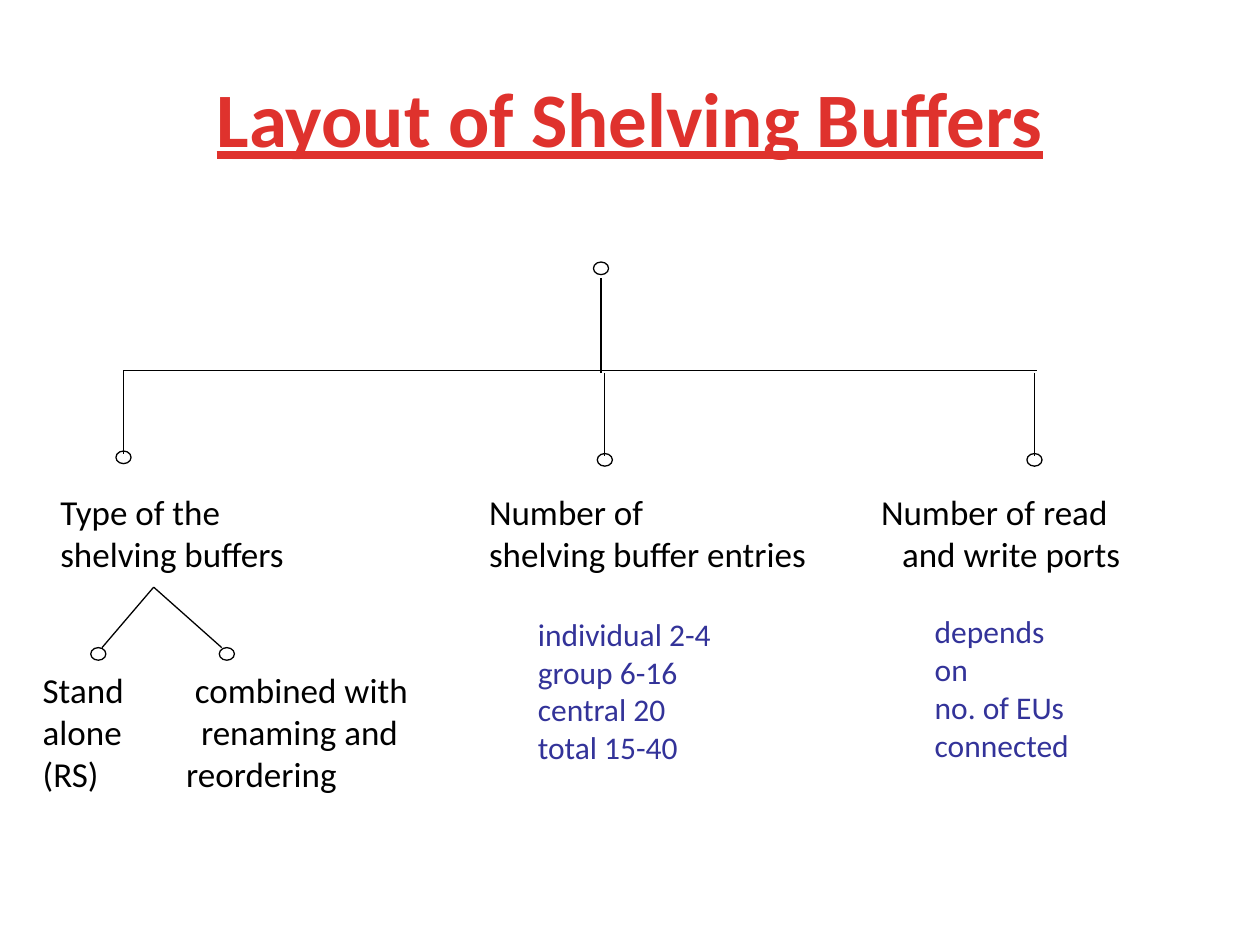
from lxml import etree
from pptx import Presentation
from pptx.dml.color import RGBColor
from pptx.enum import shapes, text
from pptx.oxml.ns import qn
from pptx.util import Pt

RED = RGBColor(0xDF, 0x32, 0x2D)
BLACK = RGBColor(0, 0, 0)
INDIGO = RGBColor(0x33, 0x33, 0x99)
CIRCLE_WIDTH, CIRCLE_HEIGHT = 8.64, 7.2


def write(shape, lines, size, color, bold=None, underline=None, align=None, tabs=None):
    frame = shape.text_frame
    frame.word_wrap = True
    for index, line in enumerate(lines):
        paragraph = frame.add_paragraph() if index else frame.paragraphs[0]
        paragraph.alignment = align
        run = paragraph.add_run()
        run.text = line
        run.font.name = "Calibri"
        run.font.size = Pt(size)
        run.font.bold = bold
        run.font.underline = underline
        run.font.color.rgb = color
        if tabs:
            tab_list = etree.SubElement(paragraph._p.get_or_add_pPr(), qn("a:tabLst"))
            for position in tabs[index]:
                etree.SubElement(tab_list, qn("a:tab"), pos=str(Pt(position)), algn="l")


presentation = Presentation()
presentation.slide_width, presentation.slide_height = Pt(720), Pt(540)
slide = presentation.slides.add_slide(presentation.slide_layouts[5])

title = slide.shapes.title
title.left, title.top, title.width, title.height = Pt(36), Pt(21.6), Pt(648), Pt(90)
title.text_frame.vertical_anchor = text.MSO_ANCHOR.MIDDLE
write(title, ["Layout of Shelving Buffers"], 44, RED, bold=True, underline=True,
      align=text.PP_ALIGN.CENTER)

branches = [(70.56, 211.68), (345.6, 213.12), (591.12, 213.12)]
lines = [
    (70.56, 211.68, 592.56, 211.68),
    (343.44, 159.12, 343.44, 213.12),
    (87.84, 335.52, 58.32, 370.08),
    (87.84, 335.52, 126.72, 370.08),
]
lines += [(x, y, x, y + 47.52) for x, y in branches]
for line in lines:
    connector = slide.shapes.add_connector(
        shapes.MSO_CONNECTOR.STRAIGHT, *[Pt(value) for value in line])
    connector.line.color.rgb = BLACK
    connector.line.width = Pt(0.75)
    etree.SubElement(connector._element.spPr, qn("a:effectLst"))

circles = [(343.44, 149.76), (56.16, 370.08), (129.6, 370.08)]
circles += [(x, y + 46.08) for x, y in branches]
for center, top in circles:
    circle = slide.shapes.add_shape(
        shapes.MSO_SHAPE.OVAL, Pt(center - CIRCLE_WIDTH / 2), Pt(top),
        Pt(CIRCLE_WIDTH), Pt(CIRCLE_HEIGHT))
    circle.shadow.inherit = False
    circle.fill.background()
    circle.line.color.rgb = BLACK
    circle.line.width = Pt(0.75)

labels = [
    ((27.36, 276.48, 656.64, 55.44), 20, BLACK,
     ["Type of the\tNumber of\tNumber of read",
      "shelving buffers\tshelving buffer entries\tand write ports"],
     [(245, 469), (245, 481)]),
    ((17.28, 378.72, 223.92, 79.2), 20, BLACK,
     ["Stand\tcombined with", "alone\trenaming and", "(RS)\treordering"],
     [(87,), (90.5,), (82,)]),
    ((300.24, 347.76, 115.92, 93.6), 18, INDIGO,
     ["individual 2-4", "group 6-16", "central 20", "total 15-40"], None),
    ((527.04, 346.32, 95.76, 72), 18, INDIGO,
     ["depends on", "no. of EUs", "connected"], None),
]
for box, size, color, content, tabs in labels:
    label = slide.shapes.add_textbox(*[Pt(value) for value in box])
    write(label, content, size, color, tabs=tabs)

presentation.save("out.pptx")
